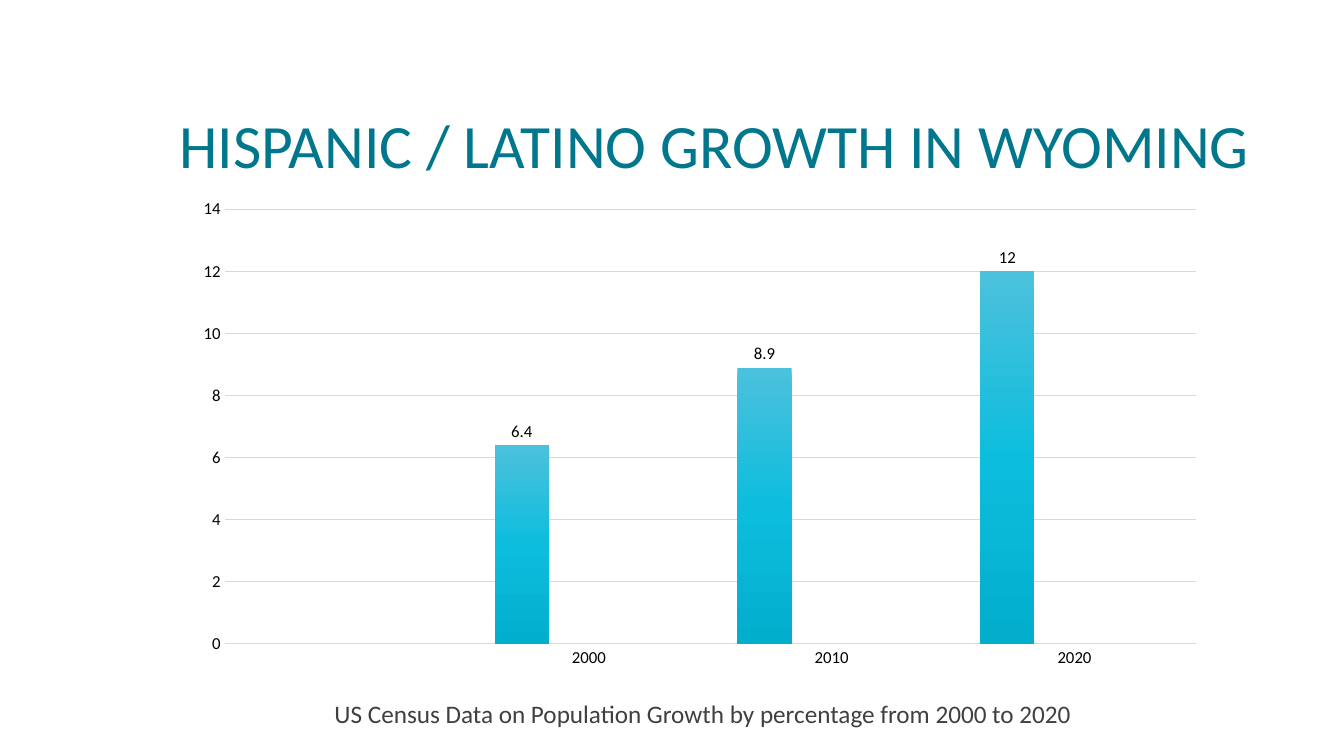
from dataclasses import dataclass

from lxml import etree
from pptx import Presentation
from pptx.chart.data import CategoryChartData
from pptx.dml.color import RGBColor
from pptx.enum.chart import XL_CHART_TYPE, XL_LABEL_POSITION, XL_TICK_MARK
from pptx.enum.text import MSO_ANCHOR
from pptx.oxml.ns import qn
from pptx.util import Cm, Pt

COLUMNS = XL_CHART_TYPE.COLUMN_CLUSTERED
OUTSIDE_END = XL_LABEL_POSITION.OUTSIDE_END
NO_TICK = XL_TICK_MARK.NONE
TOP, BOTTOM = MSO_ANCHOR.TOP, MSO_ANCHOR.BOTTOM


@dataclass(frozen=True)
class Theme:
    font: str = "Calibri"
    title: str = "00778D"
    body: str = "404040"
    label: str = "000000"
    grid: str = "D9D9D9"
    title_size: int = 44
    caption_size: int = 18
    label_size: int = 12
    chart_size: int = 10
    line_width: float = 0.75


@dataclass(frozen=True)
class Box:
    left: float
    top: float
    width: float
    height: float

    def lengths(self) -> tuple:
        return Cm(self.left), Cm(self.top), Cm(self.width), Cm(self.height)


@dataclass(frozen=True)
class TextBlock:
    box: Box
    text: str
    size: int
    color: str
    anchor: MSO_ANCHOR
    spacing: float


@dataclass(frozen=True)
class GrowthSeries:
    name: str
    values: tuple
    gradient: tuple


THEME = Theme()
YEARS = ("", "2000", "2010", "2020")
EMPTY = (None,) * len(YEARS)

TEXTS = (
    TextBlock(Box(4.27, 1.07, 28.07, 3.61), "HISPANIC / LATINO GROWTH IN WYOMING",
              THEME.title_size, THEME.title, BOTTOM, 0.85),
    TextBlock(Box(8.18, 17.48, 19.86, 1.02),
              "US Census Data on Population Growth by percentage from 2000 to 2020",
              THEME.caption_size, THEME.body, TOP, 1.0),
)
CHART_BOX = Box(4.62, 4.65, 26.04, 12.45)
PLOT_AREA = {"x": 0.04, "y": 0.05, "w": 0.94, "h": 0.88}
SERIES = (
    GrowthSeries("Series 1", (None, 6.4, 8.9, 12), ("4CC1DD", "0DBDDD", "03AECD")),
    GrowthSeries("Series 2", EMPTY, ("4FDFFF", "1BDCFF", "16C5E5")),
    GrowthSeries("Series 3", EMPTY, ("B1ECFF", "A2E9FF", "8ED0E5")),
)


def style_font(font, size: int, color: str) -> None:
    for name, value in {"name": THEME.font, "size": Pt(size), "bold": False}.items():
        setattr(font, name, value)
    font.color.rgb = RGBColor.from_string(color)


def style_line(line) -> None:
    line.color.rgb = RGBColor.from_string(THEME.grid)
    line.width = Pt(THEME.line_width)


def add_text(s, block: TextBlock) -> None:
    tf = s.shapes.add_textbox(*block.box.lengths()).text_frame
    for name, value in {"word_wrap": True, "vertical_anchor": block.anchor}.items():
        setattr(tf, name, value)
    p = tf.paragraphs[0]
    p.line_spacing = block.spacing
    r = p.add_run()
    r.text = block.text
    style_font(r.font, block.size, block.color)


def fill_gradient(ser, colors: tuple) -> None:
    """Fill the columns from top to bottom with evenly spaced stops."""
    ser.format.fill.gradient()
    ser.format.fill.gradient_angle = 270
    stops = ser._element.find(".//" + qn("a:gsLst"))
    for stop in list(stops):
        stops.remove(stop)
    for i, color in enumerate(colors):
        stop = etree.SubElement(stops, qn("a:gs"), pos=str(100000 * i // (len(colors) - 1)))
        etree.SubElement(stop, qn("a:srgbClr"), val=color)


def place_plot(chart) -> None:
    """Fix the inner plot area as fractions of the chart."""
    area = chart._chartSpace.find(".//" + qn("c:plotArea"))
    for old in area.findall(qn("c:layout")):
        area.remove(old)
    layout = etree.Element(qn("c:layout"))
    manual = etree.SubElement(layout, qn("c:manualLayout"))
    settings = {"layoutTarget": "inner", "xMode": "edge", "yMode": "edge", **PLOT_AREA}
    for tag, value in settings.items():
        etree.SubElement(manual, qn(f"c:{tag}"), val=str(value))
    area.insert(0, layout)


def add_growth_chart(s) -> None:
    data = CategoryChartData()
    data.categories = YEARS
    for item in SERIES:
        data.add_series(item.name, item.values)
    chart = s.shapes.add_chart(COLUMNS, *CHART_BOX.lengths(), data).chart
    chart.has_title = chart.has_legend = False
    style_font(chart.font, THEME.chart_size, THEME.body)
    place_plot(chart)

    # Axes and gridlines
    for axis in (chart.category_axis, chart.value_axis):
        axis.major_tick_mark = axis.minor_tick_mark = NO_TICK
        style_font(axis.tick_labels.font, THEME.label_size, THEME.label)
    style_line(chart.category_axis.format.line)
    value_axis = chart.value_axis
    scale = {"minimum_scale": 0, "maximum_scale": 14, "major_unit": 2,
             "has_major_gridlines": True}
    for name, value in scale.items():
        setattr(value_axis, name, value)
    value_axis.format.line.fill.background()
    style_line(value_axis.major_gridlines.format.line)

    # Columns and their values
    plot = chart.plots[0]
    for name, value in {"gap_width": 100, "overlap": -24, "vary_by_categories": False}.items():
        setattr(plot, name, value)
    for ser, item in zip(plot.series, SERIES):
        fill_gradient(ser, item.gradient)
        labels = ser.data_labels
        labels.show_value = True
        labels.position = OUTSIDE_END
        style_font(labels.font, THEME.label_size, THEME.label)


def main() -> None:
    prs = Presentation()
    prs.slide_width, prs.slide_height = Cm(33.87), Cm(19.05)
    s = prs.slides.add_slide(prs.slide_layouts[6])
    add_growth_chart(s)
    for block in TEXTS:
        add_text(s, block)
    prs.save("out.pptx")


if __name__ == "__main__":
    main()
